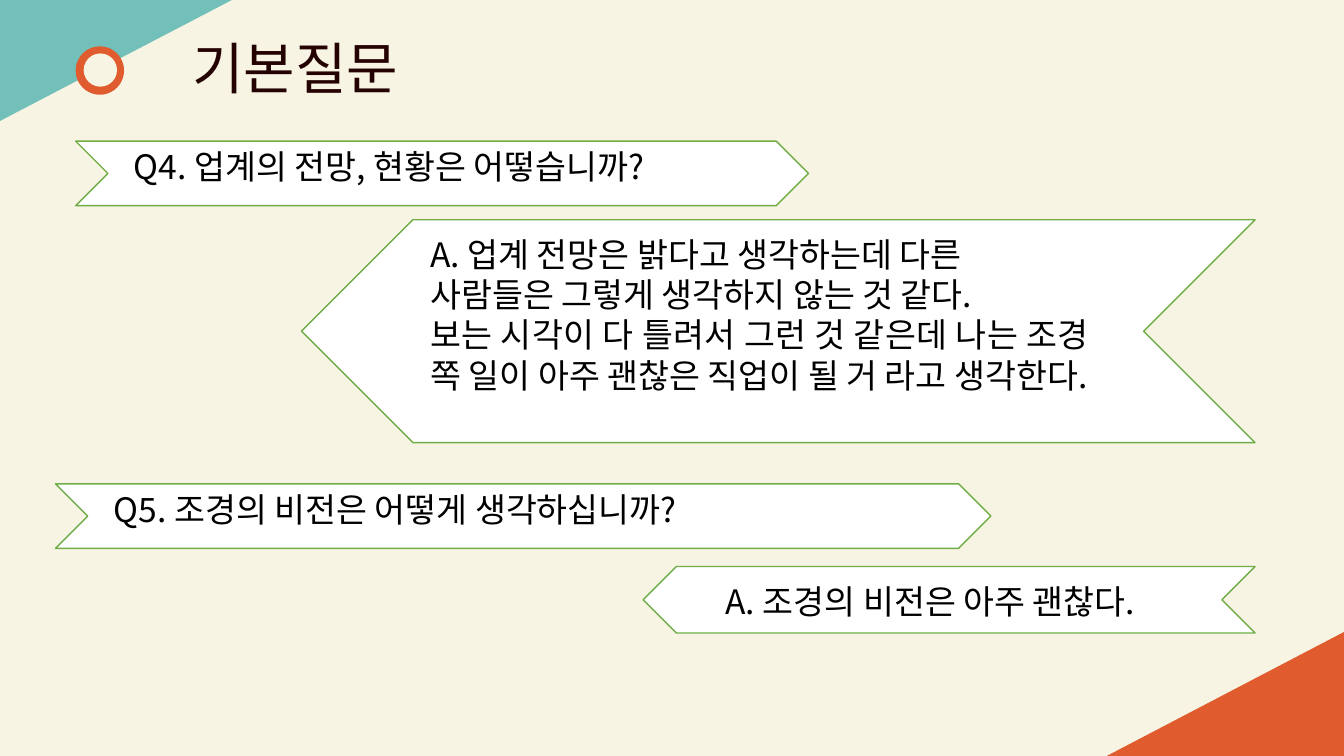
from dataclasses import dataclass

from lxml.etree import SubElement
from pptx import Presentation
from pptx.dml.color import RGBColor
from pptx.enum.shapes import MSO_SHAPE
from pptx.enum.text import MSO_ANCHOR, PP_ALIGN
from pptx.oxml.ns import qn
from pptx.shapes.autoshape import Shape
from pptx.text.text import TextFrame
from pptx.util import Inches, Pt

SLIDE_WIDTH = Inches(13.33)
SLIDE_HEIGHT = Inches(7.5)


@dataclass(frozen=True)
class Theme:
    font: str = "Noto Sans CJK KR"
    title_size: int = 40
    body_size: int = 24
    line_ratio: float = 1.2
    paper: str = "F7F4E3"
    teal: str = "73C0BA"
    orange: str = "E05B2E"
    banner: str = "FFFFFF"
    outline: str = "70AD47"
    title: str = "240202"
    text: str = "000000"


THEME = Theme()


@dataclass(frozen=True)
class Area:
    """A rectangle in percent of the slide's width and height."""
    left: float
    top: float
    width: float
    height: float

    def lengths(self) -> tuple[int, int, int, int]:
        return (int(SLIDE_WIDTH * self.left / 100), int(SLIDE_HEIGHT * self.top / 100),
                int(SLIDE_WIDTH * self.width / 100), int(SLIDE_HEIGHT * self.height / 100))


@dataclass(frozen=True)
class Ornament:
    preset: MSO_SHAPE
    area: Area
    color: str
    rotation: int = 0


@dataclass(frozen=True)
class Banner:
    area: Area
    text_area: Area
    lines: tuple[str, ...]
    rotation: int = 0
    align: PP_ALIGN = PP_ALIGN.LEFT


TITLE_AREA = Area(6.83, 3.73, 30.3, 10.27)

ORNAMENTS = (
    Ornament(MSO_SHAPE.ISOSCELES_TRIANGLE, Area(0, 0, 17.25, 16), THEME.teal, 180),
    Ornament(MSO_SHAPE.OVAL, Area(5.63, 6.13, 3.6, 6.4), THEME.orange),
    Ornament(MSO_SHAPE.OVAL, Area(6.23, 7.07, 2.48, 4.4), THEME.paper),
    Ornament(MSO_SHAPE.ISOSCELES_TRIANGLE, Area(82.35, 83.6, 17.65, 16.4), THEME.orange),
)

BANNERS = (
    Banner(Area(22.43, 29.07, 70.95, 29.47), Area(31.28, 30.27, 50.48, 22.93), (
        "A. 업계 전망은 밝다고 생각하는데 다른 ",
        "사람들은 그렇게 생각하지 않는 것 같다.",
        "보는 시각이 다 틀려서 그런 것 같은데 나는 조경 쪽 일이 아주 괜찮은 직업이 될 거 라고 생각한다.",
    ), 180, PP_ALIGN.JUSTIFY),
    Banner(Area(5.63, 18.67, 54.53, 8.53), Area(9.23, 18.67, 47.63, 6.67),
           ("Q4. 업계의 전망, 현황은 어떻습니까?",)),
    Banner(Area(47.85, 74.93, 45.53, 8.8), Area(53.25, 76.13, 36.75, 6.67),
           ("A. 조경의 비전은 아주 괜찮다.",), 180),
    Banner(Area(4.13, 64, 69.6, 8.53), Area(7.73, 64, 63.98, 6.67),
           ("Q5. 조경의 비전은 어떻게 생각하십니까?",)),
)


def write_lines(frame: TextFrame, lines: tuple[str, ...], size: int, color: str,
                align: PP_ALIGN) -> None:
    frame.word_wrap = True
    frame.vertical_anchor = MSO_ANCHOR.TOP
    for index, line in enumerate(lines):
        para = frame.add_paragraph() if index else frame.paragraphs[0]
        para.alignment = align
        para.line_spacing = Pt(size * THEME.line_ratio)
        para.space_before = Pt(0)
        span = para.add_run()
        span.text = line
        span.font.size = Pt(size)
        span.font.color.rgb = RGBColor.from_string(color)
        span.font.name = THEME.font
        SubElement(span.font._element, qn("a:ea"), typeface=THEME.font)


def add_filled(shapes, preset: MSO_SHAPE, area: Area, color: str, rotation: int) -> Shape:
    shape = shapes.add_shape(preset, *area.lengths())
    shape.rotation = rotation
    shape.shadow.inherit = False
    shape.fill.solid()
    shape.fill.fore_color.rgb = RGBColor.from_string(color)
    shape.line.fill.background()
    return shape


def add_ornament(shapes, ornament: Ornament) -> None:
    shape = add_filled(shapes, ornament.preset, ornament.area, ornament.color, ornament.rotation)
    if ornament.preset == MSO_SHAPE.ISOSCELES_TRIANGLE:
        shape.adjustments[0] = 1.0


def add_banner(shapes, banner: Banner) -> None:
    group = shapes.add_group_shape()
    chevron = add_filled(group.shapes, MSO_SHAPE.CHEVRON, banner.area, THEME.banner,
                         banner.rotation)
    chevron.line.color.rgb = RGBColor.from_string(THEME.outline)
    chevron.line.width = Pt(1)
    box = group.shapes.add_textbox(*banner.text_area.lengths())
    write_lines(box.text_frame, banner.lines, THEME.body_size, THEME.text, banner.align)


def main() -> None:
    deck = Presentation()
    deck.slide_width, deck.slide_height = SLIDE_WIDTH, SLIDE_HEIGHT
    page = deck.slides.add_slide(deck.slide_layouts[5])
    page.background.fill.solid()
    page.background.fill.fore_color.rgb = RGBColor.from_string(THEME.paper)

    for ornament in ORNAMENTS:
        add_ornament(page.shapes, ornament)
    for banner in BANNERS:
        add_banner(page.shapes, banner)

    title = page.shapes.title
    title.left, title.top, title.width, title.height = TITLE_AREA.lengths()
    write_lines(title.text_frame, ("기본질문",), THEME.title_size, THEME.title, PP_ALIGN.CENTER)
    deck.save("out.pptx")


if __name__ == "__main__":
    main()
